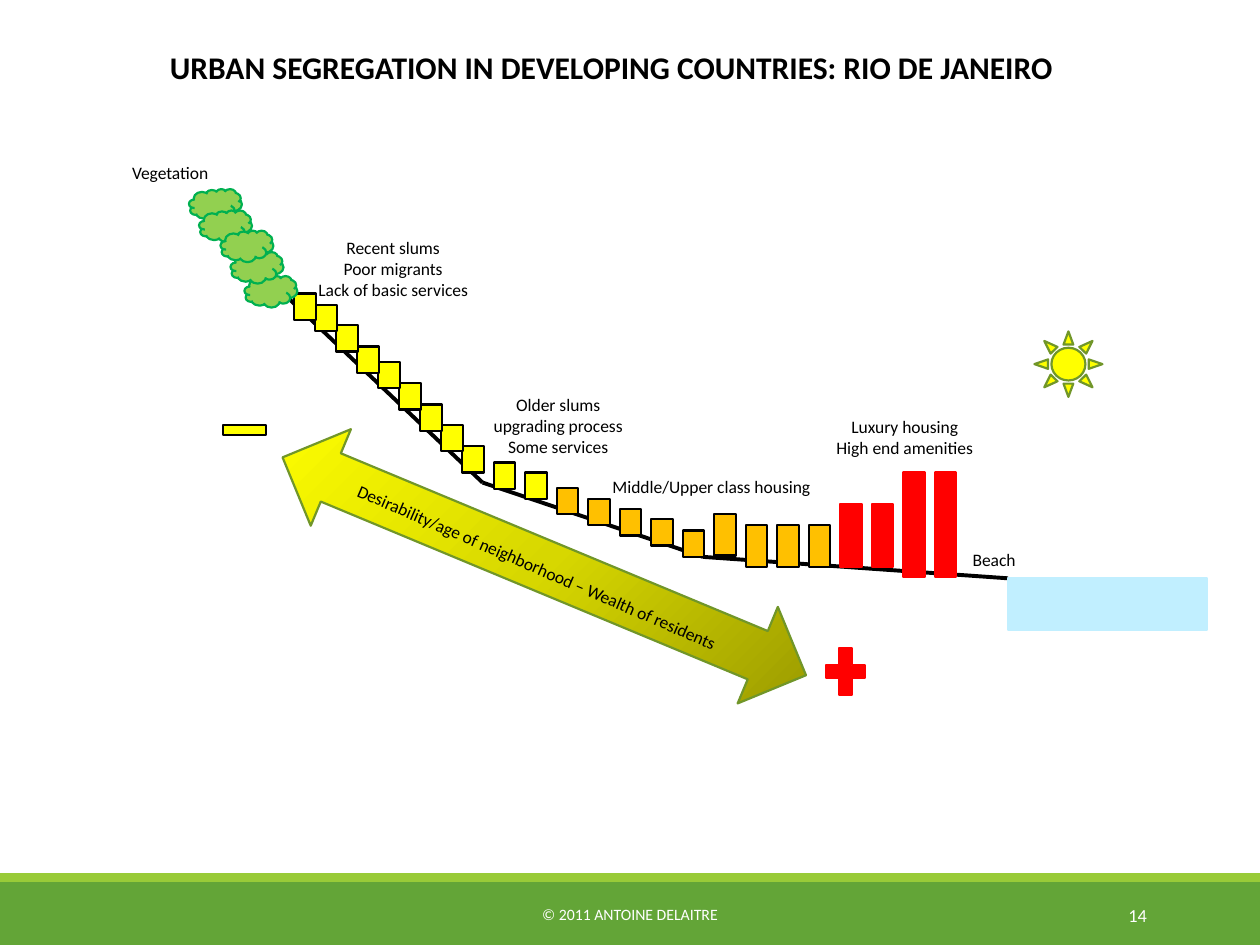
from dataclasses import dataclass

import pptx
import pptx.dml.color
import pptx.enum.shapes
import pptx.enum.text
import pptx.oxml
import pptx.oxml.ns
import pptx.util

Inches = pptx.util.Inches
SHAPE = pptx.enum.shapes.MSO_SHAPE
ALIGN = pptx.enum.text.PP_ALIGN
ANCHOR = pptx.enum.text.MSO_ANCHOR


@dataclass(frozen=True)
class Theme:
    font: str = "Calibri"
    black: str = "000000"
    white: str = "FFFFFF"
    footer: str = "63A537"
    footer_edge: str = "99CB38"
    sea: str = "C1EFFF"
    luxury: str = "FF0000"
    middle: str = "FFC000"
    slum: str = "FFFF00"
    leaf: str = "92D050"
    leaf_edge: str = "00B050"
    olive: str = "719629"
    arrow_stops: tuple = ((0, "979700"), (50, "D7D700"), (100, "FFFF00"))
    title_size: float = 18
    label_size: float = 10
    footer_size: float = 9
    number_size: float = 10.5
    outline: float = 1.25
    slope: float = 2.25


theme = Theme()
rgb = pptx.dml.color.RGBColor.from_string

deck = pptx.Presentation()
deck.slide_width, deck.slide_height = Inches(10), Inches(7.5)
slide = deck.slides.add_slide(deck.slide_layouts[6])


def draw(kind, box, fill, line=None):
    shape = slide.shapes.add_shape(kind, *map(Inches, box))
    shape.shadow.inherit = False
    shape.fill.solid()
    shape.fill.fore_color.rgb = rgb(fill)
    if line:
        shape.line.color.rgb = rgb(line)
        shape.line.width = pptx.util.Pt(theme.outline)
    else:
        shape.line.fill.background()
    return shape


def write(text, box, size=theme.label_size, color=theme.black,
          align=ALIGN.LEFT, wrap=False, bold=False):
    label = slide.shapes.add_textbox(*map(Inches, box))
    frame = label.text_frame
    frame.text = text
    frame.word_wrap = wrap
    if wrap:
        frame.vertical_anchor = ANCHOR.MIDDLE
    else:
        frame.auto_size = pptx.enum.text.MSO_AUTO_SIZE.SHAPE_TO_FIT_TEXT
    for paragraph in frame.paragraphs:
        paragraph.alignment = align
        for run in paragraph.runs:
            run.font.name = theme.font
            run.font.size = pptx.util.Pt(size)
            run.font.bold = bold
            run.font.color.rgb = rgb(color)
    return label


# Footer
draw(SHAPE.RECTANGLE, (0, 7, 10, 0.5), theme.footer)
draw(SHAPE.RECTANGLE, (0, 6.93, 10, 0.07), theme.footer_edge)
write("© 2011 ANTOINE DELAITRE", (3.02, 7.06, 3.96, 0.4), theme.footer_size,
      theme.white, ALIGN.CENTER, wrap=True)
write("14", (8.12, 7.06, 1.08, 0.4), theme.number_size, theme.white,
      ALIGN.RIGHT, wrap=True)

# Hillside running down to the sea
hillside = [(2.25, 2.33), (3.83, 3.83), (5.58, 4.42), (8, 4.59)]
for upper, lower in zip(hillside, hillside[1:]):
    slope = slide.shapes.add_connector(
        pptx.enum.shapes.MSO_CONNECTOR.STRAIGHT, *map(Inches, lower + upper))
    slope.line.color.rgb = rgb(theme.black)
    slope.line.width = pptx.util.Pt(theme.slope)
    effects = pptx.oxml.parse_xml(
        f"<a:effectLst {pptx.oxml.ns.nsdecls('a')}/>")
    slope.element.spPr.append(effects)
draw(SHAPE.RECTANGLE, (8, 4.59, 1.58, 0.41), theme.sea, theme.sea)

# Housing from the sea up: fill, line, rightmost left edge, spacing, height, tops
housing = [
    (theme.luxury, theme.luxury, 7.42, 0.25, 0.83, [3.75, 3.75]),
    (theme.luxury, theme.luxury, 6.92, 0.25, 0.5, [4, 4]),
    (theme.middle, theme.black, 6.42, 0.25, 0.33, [4.17, 4.17, 4.17, 4.08]),
    (theme.middle, theme.black, 5.42, 0.25, 0.21,
     [4.21, 4.12, 4.04, 3.96, 3.87]),
    (theme.slum, theme.black, 4.17, 0.25, 0.21, [3.75, 3.67]),
    (theme.slum, theme.black, 3.67, 1 / 6, 0.21,
     [3.54, 3.37, 3.21, 3.04, 2.87, 2.75, 2.58, 2.42, 2.33]),
]
for fill, line, right, spacing, height, tops in housing:
    for index, top in enumerate(tops):
        draw(SHAPE.RECTANGLE, (right - index * spacing, top, 0.17, height),
             fill, line)

# Desirability arrow, shaded from its lower right corner
arrow = draw(SHAPE.LEFT_RIGHT_ARROW, (2.07, 4.08, 4.5, 0.83), theme.slum,
             theme.olive)
arrow.rotation = 22.6
stops = "".join(
    f'<a:gs pos="{position * 1000}"><a:srgbClr val="{color}"/></a:gs>'
    for position, color in theme.arrow_stops)
shading = pptx.oxml.parse_xml(
    f'<a:gradFill {pptx.oxml.ns.nsdecls("a")} rotWithShape="1">'
    f'<a:gsLst>{stops}</a:gsLst><a:path path="circle">'
    '<a:fillToRect l="100000" t="100000"/></a:path></a:gradFill>')
arrow_properties = arrow.element.spPr
arrow_properties.replace(
    arrow_properties.find(pptx.oxml.ns.qn("a:solidFill")), shading)

# Sun and vegetation
draw(SHAPE.SUN, (8.21, 2.63, 0.54, 0.52), theme.slum, theme.olive)
for left, top in [(1.94, 2.19), (1.83, 2), (1.5, 1.5), (1.58, 1.67),
                  (1.75, 1.83)]:
    draw(SHAPE.CLOUD, (left, top, 0.42, 0.25), theme.leaf, theme.leaf_edge)

# Title and labels
write("URBAN SEGREGATION IN DEVELOPING COUNTRIES: RIO DE JANEIRO",
      (1.25, 0.33, 7.25, 0.4), theme.title_size, bold=True)
write("Beach", (7.62, 4.31, 0.55, 0.27))
write("Vegetation", (0.95, 1.24, 0.83, 0.27))
districts = [
    ("Recent slums\nPoor migrants\nLack of basic services",
     (2.42, 1.83, 1.4, 0.61)),
    ("Older slums\nupgrading process\nSome services",
     (3.81, 3.08, 1.24, 0.61)),
    ("Middle/Upper class housing", (4.75, 3.73, 1.79, 0.27)),
    ("Luxury housing\nHigh end amenities", (6.53, 3.25, 1.3, 0.44)),
]
for description, box in districts:
    write(description, box, align=ALIGN.CENTER)
desirability = write("Desirability/age of neighborhood – Wealth of residents",
                     (2.62, 4.38, 3.33, 0.27))
desirability.rotation = 23.5

# Ends of the desirability scale
draw(SHAPE.MATH_PLUS, (6.5, 5.08, 0.42, 0.5), theme.luxury, theme.luxury)
draw(SHAPE.MATH_MINUS, (1.71, 3.25, 0.46, 0.33), theme.slum, theme.black)

deck.save("out.pptx")
